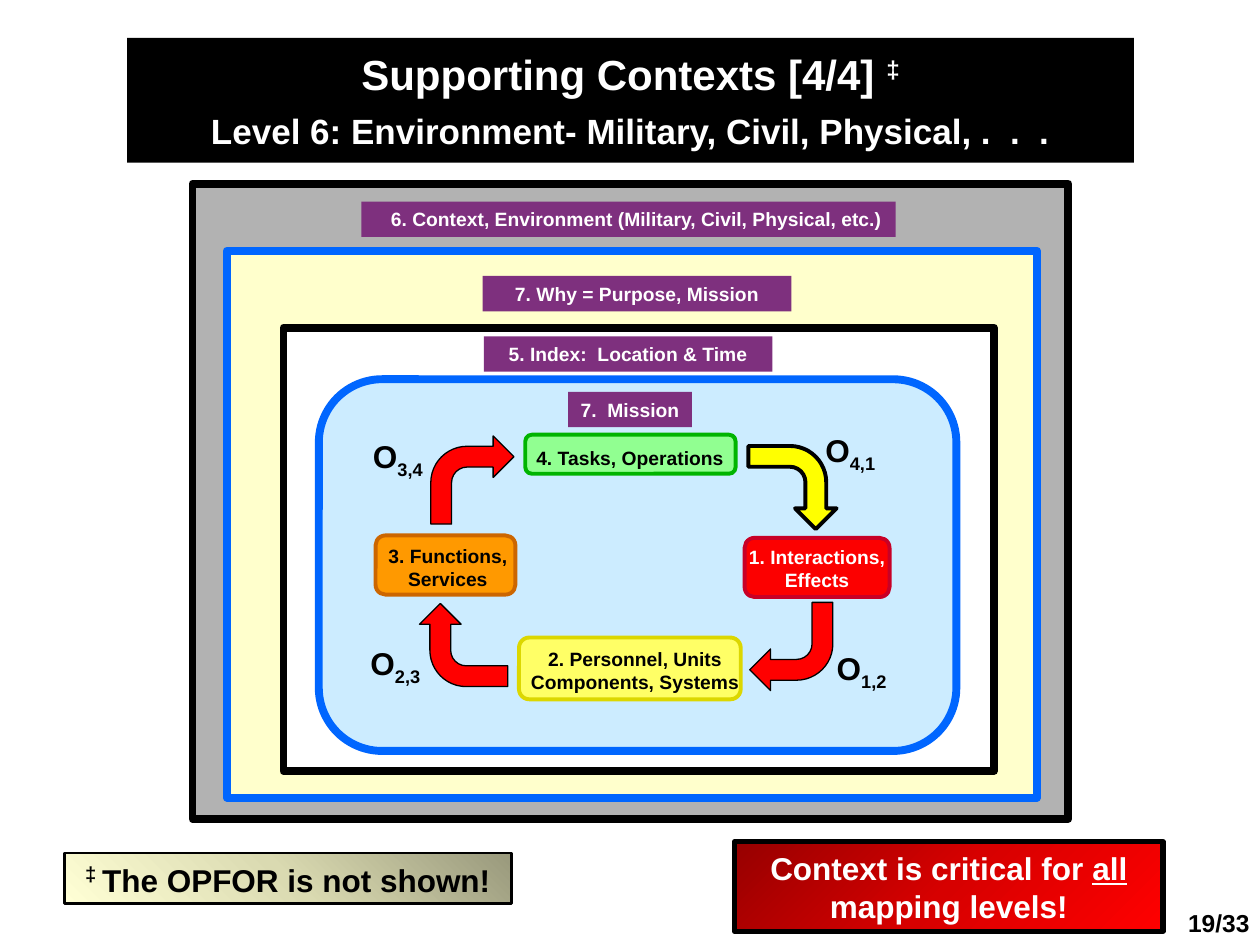
from dataclasses import dataclass

from pptx import Presentation
from pptx.dml.color import RGBColor
from pptx.enum.shapes import MSO_SHAPE
from pptx.enum.text import MSO_ANCHOR, PP_ALIGN
from pptx.oxml import parse_xml
from pptx.oxml.ns import nsdecls, qn
from pptx.util import Pt


@dataclass(frozen=True)
class Theme:
    font: str = "Arial"
    black: str = "000000"
    white: str = "FFFFFF"
    grey: str = "B2B2B2"
    cream: str = "FFFFCC"
    sky: str = "CCECFF"
    blue: str = "0066FF"
    purple: str = "7E307E"
    red: str = "FF0000"
    yellow: str = "FFFF00"
    tasks: tuple = ("91FF91", "00B400")
    effects: tuple = ("FC0000", "C80026")
    units: tuple = ("FFFF66", "DCD700")
    services: tuple = ("FF9900", "CC6600")
    alert: tuple = ("970000", "D70000", "FF0000")
    sand: tuple = ("99997C", "DADAB1", "FFFFD5")
    title: int = 24
    sub: int = 20
    body: int = 18
    page: int = 14
    label: int = 11


LINEAR = '<a:lin ang="2700000" scaled="1"/>'
RADIAL = ('<a:path path="circle"><a:fillToRect l="100000" t="0" '
          'r="0" b="100000"/></a:path>')


class Deck:
    def __init__(self, theme):
        self.theme = theme
        self.prs = Presentation()
        self.prs.slide_width, self.prs.slide_height = Pt(720), Pt(540)
        self.slide = self.prs.slides.add_slide(self.prs.slide_layouts[6])

    def shape(self, kind, box, fill=None, line=None, width=1, turn=0, adj=None):
        item = self.slide.shapes.add_shape(kind, *map(Pt, box))
        item.shadow.inherit = False
        item.rotation = turn
        if adj is not None:
            item.adjustments[0] = adj
        if fill:
            item.fill.solid()
            item.fill.fore_color.rgb = RGBColor.from_string(fill)
        if line:
            item.line.color.rgb = RGBColor.from_string(line)
            item.line.width = Pt(width)
        else:
            item.line.fill.background()
        return item

    def blend(self, item, colors, shade):
        stops = "".join(
            f'<a:gs pos="{i * 50000}"><a:srgbClr val="{c}"/></a:gs>'
            for i, c in enumerate(colors))
        item.fill.gradient()
        props = item._element.spPr
        old = props.find(qn("a:gradFill"))
        props.replace(old, parse_xml(
            f'<a:gradFill {nsdecls("a")} rotWithShape="1">'
            f'<a:gsLst>{stops}</a:gsLst>{shade}</a:gradFill>'))

    def label(self, item, paras, size, color, align=PP_ALIGN.CENTER,
              anchor=MSO_ANCHOR.MIDDLE, side=7.2, pad=0, wrap=True):
        frame = item.text_frame
        frame.word_wrap = wrap
        frame.vertical_anchor = anchor
        frame.margin_left, frame.margin_right = Pt(side + pad), Pt(side)
        for i, runs in enumerate(paras):
            para = frame.add_paragraph() if i else frame.paragraphs[0]
            para.alignment = align
            font = para.font
            font.name, font.size, font.bold = self.theme.font, Pt(size), True
            font.color.rgb = RGBColor.from_string(color)
            for run in runs:
                self.piece(para, *run)
        return frame.paragraphs

    def piece(self, para, text, base=0, size=None, under=False):
        run = para.add_run()
        run.text = text
        if size:
            run.font.size = Pt(size)
        if under:
            run.font.underline = True
        if base:
            run._r.get_or_add_rPr().set("baseline", str(base * 1000))

    def text(self, box, paras, size, color, align=PP_ALIGN.LEFT, **opts):
        item = self.slide.shapes.add_textbox(*map(Pt, box))
        self.label(item, paras, size, color, align, MSO_ANCHOR.TOP, **opts)

    def tag(self, left, top, width, words, pad=0):
        item = self.shape(MSO_SHAPE.RECTANGLE, (left, top, width, 20.2),
                          self.theme.purple)
        self.label(item, [[(words,)]], self.theme.label, self.theme.white,
                   side=6.5, pad=pad, wrap=False)

    def step(self, kind, box, pair, area, lines, color, pad=0):
        self.shape(kind, box, *pair, 2.25)
        self.text(area, [[(line,)] for line in lines], self.theme.label, color,
                  PP_ALIGN.CENTER, side=6.5, pad=pad, wrap=len(lines) > 1)

    def arrow(self, left, top, turn, fill, width=0.75):
        self.shape(MSO_SHAPE.BENT_ARROW, (left, top, 47.5, 50.4), fill,
                   self.theme.black, width, turn)

    def link(self, left, top, index):
        self.text((left, top, 54, 28.8), [[("O",), (index, -25)]],
                  self.theme.body, self.theme.black, side=6.5)


def main():
    t = Theme()
    deck = Deck(t)
    rect, rounded = MSO_SHAPE.RECTANGLE, MSO_SHAPE.ROUNDED_RECTANGLE

    deck.text((671.8, 515.5, 51.1, 24.5), [[("19/33",)]], t.page, t.black,
              wrap=False)

    title = deck.shape(rect, (72.7, 21.6, 575.3, 71.3), t.black)
    paras = deck.label(title, [
        [("Supporting Contexts [4/4] ",), ("‡", 30)],
        [("Level 6: Environment- Military, Civil, Physical, .  .  .",)],
    ], t.title, t.white)
    paras[1].font.size = Pt(t.sub)
    paras[1].space_before = Pt(6)

    alert = deck.shape(rect, (419.8, 481, 244.8, 51.1), None, t.black, 3)
    deck.blend(alert, t.alert, LINEAR)
    deck.label(alert, [[("Context is critical for ",), ("all", 0, None, True),
                        (" mapping levels!",)]], t.body, t.white)

    for kind, box, fill, line, adj in (
        (rect, (110, 105, 500.5, 363), t.grey, t.black, None),
        (rounded, (129.6, 143.3, 463, 312.5), t.cream, t.blue, 0),
        (rect, (162, 187.2, 406, 253.4), t.white, t.black, None),
        (rounded, (182.2, 216.7, 364.3, 212.4), t.sky, t.blue, 0.17),
    ):
        deck.shape(kind, box, fill, line, 4.5, adj=adj)

    deck.tag(275.8, 157.7, 176.4, "7. Why = Purpose, Mission")

    deck.step(MSO_SHAPE.FLOWCHART_ALTERNATE_PROCESS,
              (300.2, 248.4, 120.2, 22.3), t.tasks,
              (294.5, 251.3, 126.7, 20.2),
              ["4. Tasks, Operations"], t.black, pad=4.4)
    for box, pair, area, lines, color in (
        ((425.5, 307.4, 82.8, 33.8), t.effects, (416.9, 308.2, 100.1, 33.1),
         ["1. Interactions,", "Effects"], t.white),
        ((296.6, 364.3, 126.7, 35.3), t.units, (293.8, 366.5, 138.2, 33.1),
         ["2. Personnel, Units", "Components, Systems"], t.black),
        ((214.6, 306, 79.9, 33.8), t.services, (213.1, 307.4, 85.7, 33.8),
         ["3. Functions,", "Services"], t.black),
    ):
        deck.step(rounded, box, pair, area, lines, color)

    deck.arrow(246.2, 249.1, 0, t.red)
    deck.arrow(241.2, 343.4, 270, t.red)
    deck.arrow(428.4, 344.2, 180, t.red)
    deck.arrow(429.1, 253.4, 90, t.yellow, 2.25)

    deck.link(205.2, 364.3, "2,3")
    deck.link(465.1, 242.6, "4,1")
    deck.link(206.6, 246.2, "3,4")
    deck.link(471.6, 367.2, "1,2")

    deck.tag(324.7, 223.9, 70.6, "7.  Mission")
    deck.tag(276.5, 192.2, 164.9, "5. Index:  Location & Time")
    deck.tag(206.6, 115.2, 305.3,
             "6. Context, Environment (Military, Civil, Physical, etc.)", 9)

    note = deck.shape(rect, (36.7, 487.4, 255.6, 28.8), None, t.black, 1.5)
    deck.blend(note, t.sand, RADIAL)
    deck.label(note, [[("‡ ", 30, t.sub), ("The OPFOR is not shown!",)]],
               t.body, t.black)

    deck.prs.save("out.pptx")


if __name__ == "__main__":
    main()
